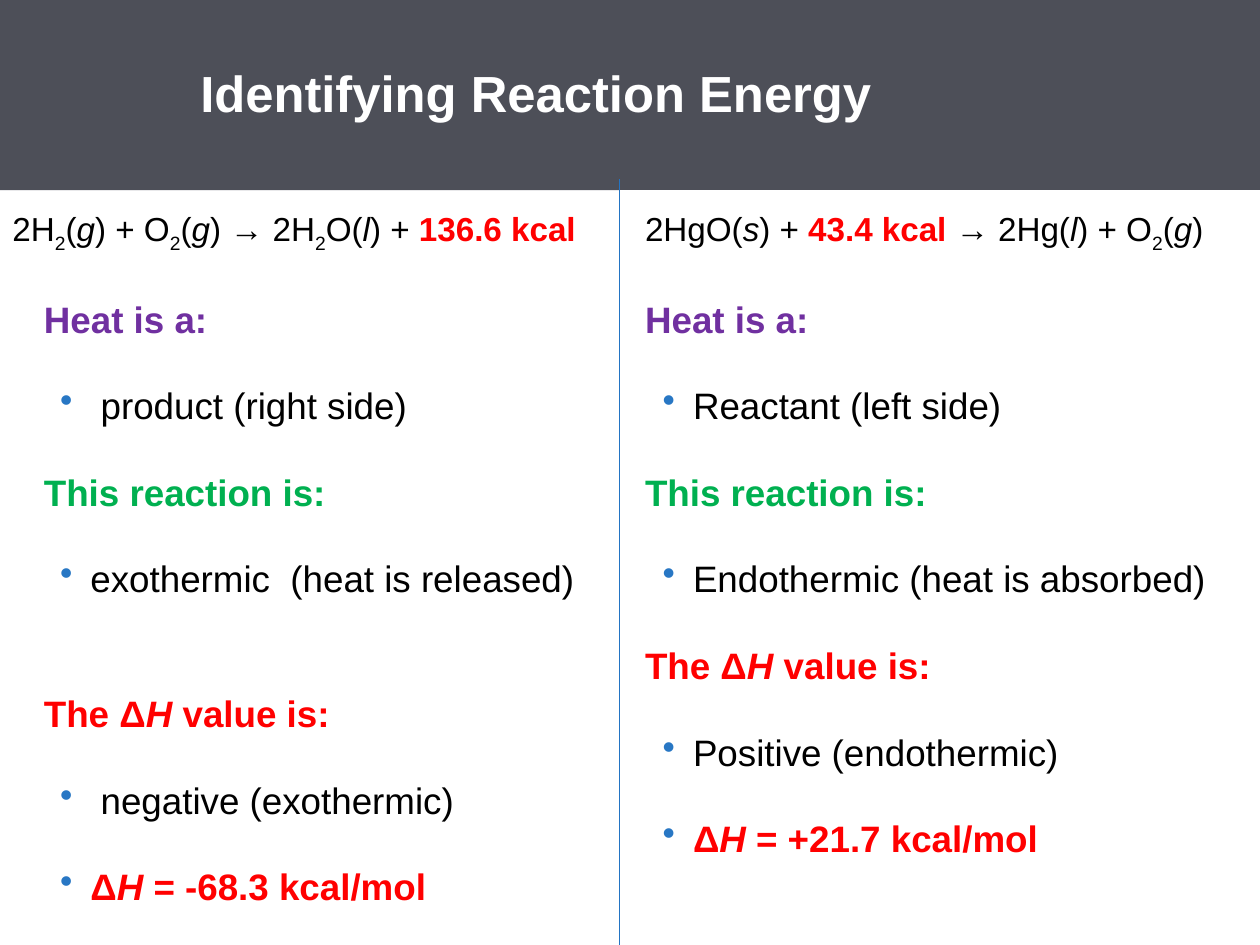
from lxml import etree
from pptx import Presentation
from pptx.dml.color import RGBColor
from pptx.enum.shapes import MSO_CONNECTOR, MSO_SHAPE
from pptx.enum.text import MSO_ANCHOR, PP_ALIGN
from pptx.oxml.ns import qn
from pptx.util import Pt

RECT = MSO_SHAPE.RECTANGLE
LINE = MSO_CONNECTOR.STRAIGHT
LEFT = PP_ALIGN.LEFT
TOP, MIDDLE = MSO_ANCHOR.TOP, MSO_ANCHOR.MIDDLE

HUES = {"head": "4D4F58", "white": "FFFFFF", "text": "000000", "heat": "7030A0",
        "kind": "00B050", "red": "FF0000", "dot": "2877C4", "rule": "2374C3"}
WIDE, HIGH = 720, 540
BAND = 108.7  # height of the title band
MID = 354.2   # column divider
GAP = 21      # space between paragraphs
EXTRA = 27.5  # wider gap, one more line


class Slide:
    font = "Arial"

    def __init__(self, deck):
        self.slide = deck.slides.add_slide(deck.slide_layouts[6])

    def color(self, name):
        return RGBColor.from_string(HUES[name])

    def frame(self, shape, pads, anchor=TOP):
        frame = shape.text_frame
        frame.word_wrap = True
        frame.vertical_anchor = anchor
        (frame.margin_left, frame.margin_top,
         frame.margin_right, frame.margin_bottom) = map(Pt, pads)
        return frame

    def panel(self, box, hue, pads, anchor=TOP):
        shape = self.slide.shapes.add_shape(RECT, *map(Pt, box))
        shape.shadow.inherit = False
        shape.fill.solid()
        shape.fill.fore_color.rgb = self.color(hue)
        shape.line.fill.background()
        return self.frame(shape, pads, anchor)

    def label(self, box, pads):
        return self.frame(self.slide.shapes.add_textbox(*map(Pt, box)), pads)

    def indent(self, para, left, hang=0, dot=False):
        props = para._p.get_or_add_pPr()
        props.set("marL", str(Pt(left)))
        props.set("indent", str(Pt(-hang)))
        if dot:
            tint = etree.SubElement(props, qn("a:buClr"))
            etree.SubElement(tint, qn("a:srgbClr")).set("val", HUES["dot"])
            etree.SubElement(props, qn("a:buChar")).set("char", "•")

    def runs(self, para, parts, size, hue, bold=False):
        """Parts are text, or (text, marks): i italic, s subscript, r red bold."""
        for part in parts:
            text, marks = (part, "") if isinstance(part, str) else part
            run = para.add_run()
            run.text = text
            font = run.font
            font.name, font.size = self.font, Pt(size)
            font.bold = bold or "r" in marks
            font.italic = "i" in marks
            font.color.rgb = self.color("red" if "r" in marks else hue)
            if "s" in marks:
                run._r.get_or_add_rPr().set("baseline", "-25000")

    def title(self, frame, text):
        para = frame.paragraphs[0]
        para.alignment = LEFT
        para.line_spacing = 0.95
        self.indent(para, 89.3)
        self.runs(para, [text], 29, "white", True)

    def column(self, frame, lines, left, inset):
        """Fill a column with its equation, then headings and bullets."""
        for num, (kind, parts, more) in enumerate(lines):
            para = frame.add_paragraph() if num else frame.paragraphs[0]
            para.alignment = LEFT
            if kind == "dot":
                self.indent(para, inset, 17.3, True)
            elif num:
                self.indent(para, left)
            para.line_spacing = 1.13
            para.space_before = Pt(GAP + more if num else 0)
            head = kind in ("heat", "kind", "red")
            self.runs(para, parts, 21 if num else 19, kind if head else "text", head)

    def rule(self, x, top, end):
        line = self.slide.shapes.add_connector(LINE, Pt(x), Pt(top), Pt(x), Pt(end))
        line.line.color.rgb = self.color("rule")
        line.line.width = Pt(0.75)
        etree.SubElement(line._element.spPr, qn("a:effectLst"))


def lines(equation, role, kind, sign, value, more=0):
    """Both columns ask the same three questions."""
    return [
        ("eq", equation, 0),
        ("heat", ["Heat is a:"], 0),
        ("dot", [role], 0),
        ("kind", ["This reaction is:"], 0),
        ("dot", [kind], 0),
        ("red", ["The Δ", ("H", "i"), " value is:"], more),
        ("dot", [sign], 0),
        ("dot", [("Δ", "r"), ("H", "ir"), (f" = {value} kcal/mol", "r")], 0),
    ]


def main():
    deck = Presentation()
    deck.slide_width, deck.slide_height = Pt(WIDE), Pt(HIGH)
    page = Slide(deck)
    two, gas, liquid = ("2", "s"), ("g", "i"), ("l", "i")

    # Title band
    band = page.panel((0, 0, WIDE, BAND), "head", (25.2, 10.8, 25.2, 10.8), MIDDLE)
    page.title(band, "Identifying Reaction Energy")

    # Right column: heat absorbed
    right = page.panel((MID, BAND, WIDE - MID, HIGH - BAND), "white",
                       (14.4, 7.2, 27.4, 15.1))
    page.column(right, lines(
        ["2HgO(", ("s", "i"), ") + ", ("43.4 kcal ", "r"), "→ 2Hg(", liquid,
         ") + O", two, "(", gas, ")"],
        "Reactant (left side)", "Endothermic (heat is absorbed)",
        "Positive (endothermic)", "+21.7"), 0, 27.4)

    # Left column: heat released
    left = page.label((0, BAND, 334.8, HIGH - BAND), (7.2, 7.2, 0, 3.6))
    page.column(left, lines(
        ["2H", two, "(", gas, ") + O", two, "(", gas, ") → 2H", two, "O(", liquid,
         ") + ", ("136.6 kcal", "r")],
        " product (right side)", "exothermic  (heat is released)",
        " negative (exothermic)", "-68.3", EXTRA), 18, 44.6)

    # Column divider
    page.rule(MID, 102.2, 533.5)
    page.rule(MID, BAND, HIGH)

    deck.save("out.pptx")


if __name__ == "__main__":
    main()
